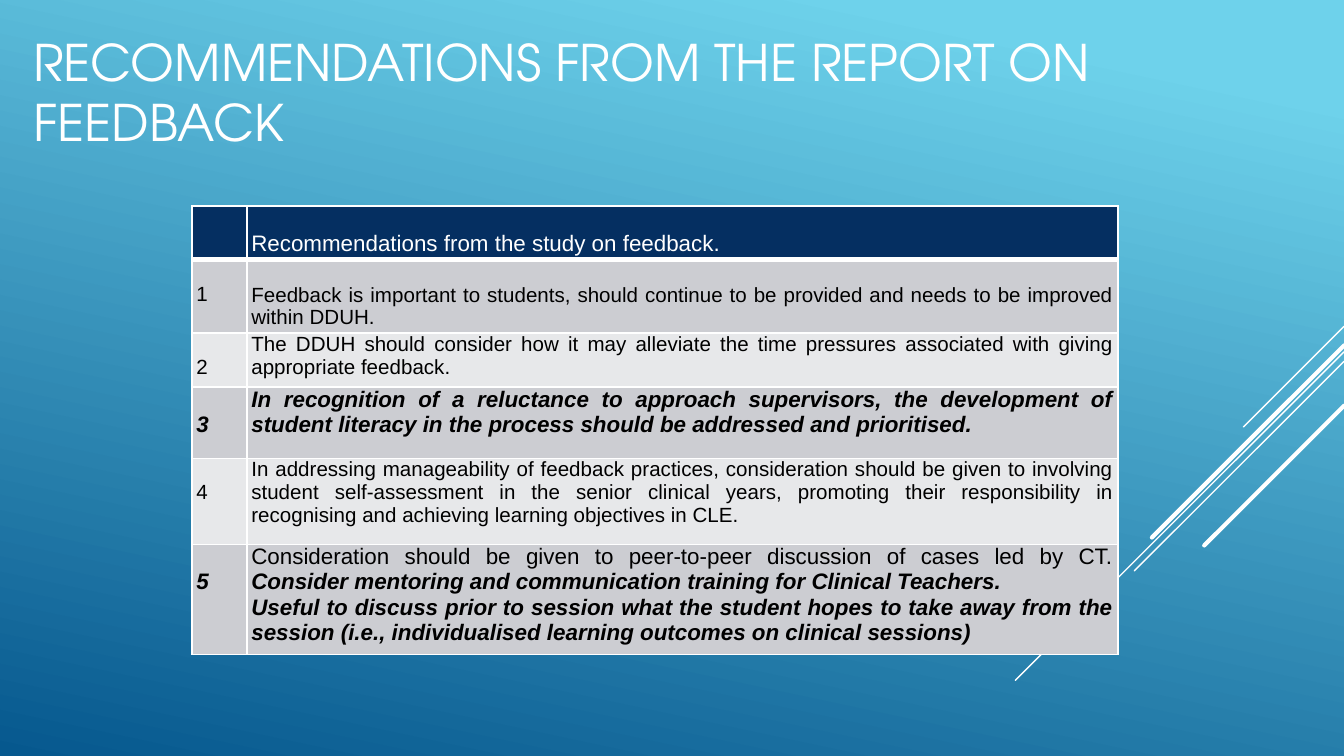
from dataclasses import dataclass

from lxml.etree import SubElement
from pptx import Presentation
from pptx.dml.color import RGBColor
from pptx.enum.text import MSO_ANCHOR, PP_ALIGN
from pptx.enum.shapes import MSO_CONNECTOR
from pptx.oxml import parse_xml
from pptx.oxml.ns import nsdecls, qn
from pptx.util import Cm, Pt


@dataclass(frozen=True)
class Theme:
    sky: RGBColor = RGBColor(0x6E, 0xD2, 0xEB)
    deep: RGBColor = RGBColor(0x06, 0x58, 0x8E)
    navy: RGBColor = RGBColor(0x05, 0x2F, 0x61)
    odd_row: RGBColor = RGBColor(0xCC, 0xCD, 0xD2)
    even_row: RGBColor = RGBColor(0xE7, 0xE8, 0xEA)
    white: RGBColor = RGBColor(0xFF, 0xFF, 0xFF)
    black: RGBColor = RGBColor(0, 0, 0)
    title_font: str = "TeX Gyre Adventor"
    body_font: str = "Arial"
    title_size: Pt = Pt(27)
    strong_size: Pt = Pt(12)
    body_size: Pt = Pt(11)


theme = Theme()


def style_font(font, size, color, name=theme.body_font, strong=False):
    font.name, font.size = name, size
    font.color.rgb = color
    font.bold = font.italic = strong


def finish_cell(cell, fill, bottom_width=1):
    cell.fill.solid()
    cell.fill.fore_color.rgb = fill
    cell.margin_left = cell.margin_right = Cm(0.08)
    cell.margin_top = cell.margin_bottom = 0
    widths = {"lnL": 1, "lnR": 1, "lnT": 1, "lnB": bottom_width}
    for index, (side, width) in enumerate(widths.items()):
        border = parse_xml(
            f'<a:{side} {nsdecls("a")} w="{Pt(width)}"><a:solidFill>'
            f'<a:srgbClr val="{theme.white}"/></a:solidFill></a:{side}>')
        cell._tc.get_or_add_tcPr().insert(index, border)


deck = Presentation()
deck.slide_width, deck.slide_height = Cm(25.4), Cm(14.29)
slide = deck.slides.add_slide(deck.slide_layouts[6])

# Background gradient, light at the top
backdrop = slide.background.fill
backdrop.gradient()
backdrop.gradient_angle = 258
for stop, color, position in zip(backdrop.gradient_stops,
                                 (theme.sky, theme.deep), (0.1, 1)):
    stop.color.rgb = color
    stop.position = position

# Diagonal rays at 45 degrees from the right edge: start height, reach, weight
rays = [(6.17, 1.9, 0.75), (6.65, 6.21, 0.75), (6.83, 3.96, 0.75),
        (6.53, 3.63, 2.25), (7.67, 2.64, 2.25)]
for start, reach, weight in rays:
    ray = slide.shapes.add_connector(MSO_CONNECTOR.STRAIGHT, Cm(25.4), Cm(start),
                                     Cm(25.4 - reach), Cm(start + reach))
    ray.line.color.rgb = theme.white
    ray.line.width = Pt(weight)
    ray.line._ln.set("cap", "rnd")
    SubElement(ray._element.spPr, qn("a:effectLst"))

# Title
title = slide.shapes.add_textbox(Cm(0.38), Cm(0.15), Cm(24), Cm(3.15)).text_frame
title.word_wrap = True
title.vertical_anchor = MSO_ANCHOR.MIDDLE
heading = title.paragraphs[0]
heading.text = "RECOMMENDATIONS FROM THE REPORT ON FEEDBACK"
style_font(heading.font, theme.title_size, theme.white, theme.title_font)

# Recommendations: row height, emphasis, paragraphs made of (text, emphasis) runs
recommendations = [
    (1.35, False, [[("Feedback is important to students, should continue to be "
                     "provided and needs to be improved within DDUH.", False)]]),
    (1.02, False, [[("The DDUH should consider how it may alleviate the time "
                     "pressures associated with giving appropriate feedback.", False)]]),
    (1.35, True, [[("In recognition of a reluctance to approach supervisors, the "
                    "development of student literacy in the process should be "
                    "addressed and prioritised.", True)]]),
    (1.63, False, [[("In addressing manageability of feedback practices, "
                     "consideration should be given to involving student "
                     "self-assessment in the senior clinical years, promoting their "
                     "responsibility in recognising and achieving learning "
                     "objectives in CLE.", False)]]),
    (2.08, True, [[("Consideration should be given to peer-to-peer discussion of "
                    "cases led by CT. ", False),
                   ("Consider mentoring and communication training for Clinical "
                    "Teachers.", True)],
                  [("Useful to discuss prior to session what the student hopes to "
                    "take away from the session (i.e., individualised learning "
                    "outcomes on clinical sessions)", True)]]),
]

table = slide.shapes.add_table(len(recommendations) + 1, 2, Cm(3.63), Cm(3.89),
                               Cm(17.5), Cm(8.45)).table
table.horz_banding = False
table.columns[0].width, table.columns[1].width = Cm(1.04), Cm(16.46)

# Header row
table.rows[0].height = Cm(1.02)
for cell, text in zip(table.rows[0].cells,
                      ("", "Recommendations from the study on feedback.")):
    finish_cell(cell, theme.navy, bottom_width=3)
    label = cell.text_frame.paragraphs[0]
    label.text = text
    label.alignment = PP_ALIGN.JUSTIFY
    label.line_spacing = 2.0
    style_font(label.font, theme.strong_size, theme.white)

# Numbered rows
for number, (height, strong, paragraphs) in enumerate(recommendations, 1):
    table.rows[number].height = Cm(height)
    number_cell, advice_cell = table.rows[number].cells
    size = theme.strong_size if strong else theme.body_size
    for cell in (number_cell, advice_cell):
        finish_cell(cell, theme.odd_row if number % 2 else theme.even_row)

    numeral = number_cell.text_frame.paragraphs[0]
    numeral.text = str(number)
    numeral.alignment = PP_ALIGN.JUSTIFY
    numeral.line_spacing = 2.0
    style_font(numeral.font, size, theme.black, strong=strong)

    advice = advice_cell.text_frame
    for position, runs in enumerate(paragraphs):
        paragraph = advice.add_paragraph() if position else advice.paragraphs[0]
        paragraph.alignment = PP_ALIGN.JUSTIFY
        style_font(paragraph.font, size, theme.black, strong=strong)
        for text, emphasis in runs:
            run = paragraph.add_run()
            run.text = text
            if emphasis != strong:
                run.font.bold = run.font.italic = emphasis

# The first recommendation sits one line lower in its cell
table.cell(1, 1).margin_top = Cm(0.45)

deck.save("out.pptx")
